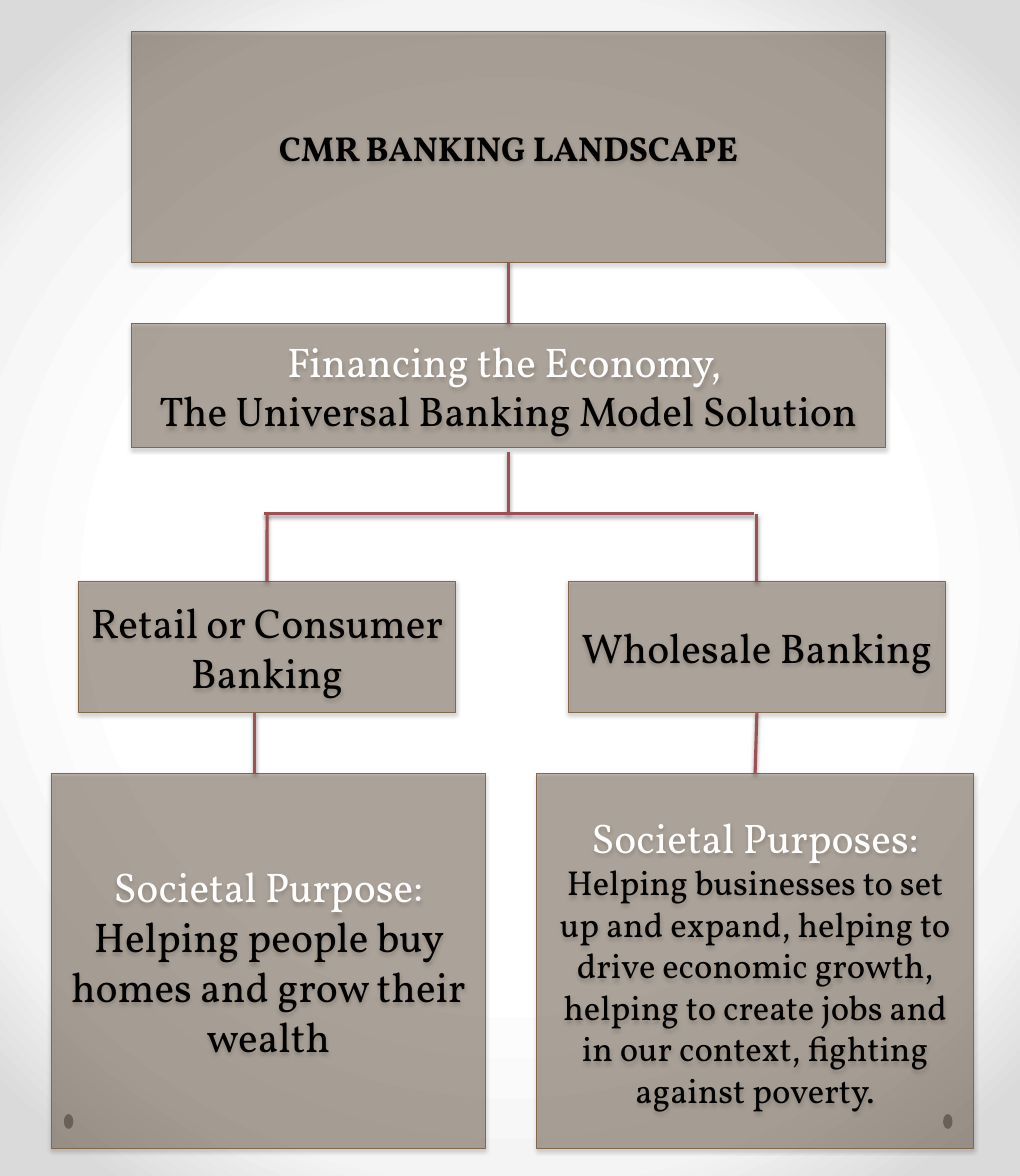
from lxml.etree import SubElement
from pptx import Presentation
from pptx.dml.color import RGBColor
from pptx.enum.shapes import MSO_CONNECTOR, MSO_SHAPE
from pptx.enum.text import MSO_ANCHOR, MSO_AUTO_SIZE, PP_ALIGN
from pptx.oxml.ns import qn
from pptx.util import Cm, Pt

FONT = "Vollkorn"
WHITE = RGBColor(0xFF, 0xFF, 0xFF)
BLACK = RGBColor(0x00, 0x00, 0x00)
BROWN = RGBColor(0x63, 0x4D, 0x36)
BORDER = RGBColor(0x84, 0x66, 0x48)
RED = RGBColor(0x9C, 0x52, 0x52)
GRAY = RGBColor(0x80, 0x80, 0x80)
LIGHT = RGBColor(0xF4, 0xF4, 0xF4)
SILVER = RGBColor(0xDA, 0xDA, 0xDA)
BACKGROUND_STOPS = [(50, WHITE), (76, LIGHT), (92, SILVER)]


def add_child(parent, tag, **attributes):
    values = {name: str(value) for name, value in attributes.items()}
    return SubElement(parent, qn(tag), values)


def set_background(slide):
    """Radial gradient, white in the middle and grey in the corners."""
    slide.background.fill.solid()
    properties = slide._element.cSld.find(qn("p:bg")).find(qn("p:bgPr"))
    properties.remove(properties.find(qn("a:solidFill")))
    gradient = add_child(properties, "a:gradFill", rotWithShape=1)
    properties.insert(0, gradient)
    stops = add_child(gradient, "a:gsLst")
    for position, color in BACKGROUND_STOPS:
        stop = add_child(stops, "a:gs", pos=position * 1000)
        add_child(stop, "a:srgbClr", val=color)
    circle = add_child(gradient, "a:path", path="circle")
    add_child(circle, "a:fillToRect", l=50000, t=50000, r=50000, b=50000)


def add_shadow(shape, opacity, distance):
    effects = add_child(shape._element.spPr, "a:effectLst")
    shadow = add_child(effects, "a:outerShdw", blurRad=Pt(3.1), dist=Pt(distance),
                       dir=5400000, algn="ctr", rotWithShape=0)
    color = add_child(shadow, "a:srgbClr", val=BLACK)
    add_child(color, "a:alpha", val=opacity * 1000)


def add_run(paragraph, text, size=30, color=BLACK, bold=False):
    run = paragraph.add_run()
    run.text = text
    run.font.name = FONT
    run.font.size = Pt(size)
    run.font.bold = bold
    run.font.color.rgb = color


def format_box(shape, paragraphs):
    """Paragraphs are lists of (text, format) pairs."""
    shape.fill.solid()
    shape.fill.fore_color.rgb = BROWN
    fill_color = shape._element.spPr.find(qn("a:solidFill"))[0]
    add_child(fill_color, "a:alpha", val=40000)
    shape.line.color.rgb = BORDER
    shape.line.width = Pt(0.75)
    add_shadow(shape, opacity=35, distance=1.8)
    frame = shape.text_frame
    frame.word_wrap = True
    frame.auto_size = MSO_AUTO_SIZE.NONE
    frame.vertical_anchor = MSO_ANCHOR.MIDDLE
    for index, runs in enumerate(paragraphs):
        paragraph = frame.add_paragraph() if index else frame.paragraphs[0]
        paragraph.alignment = PP_ALIGN.CENTER
        for text, text_format in runs:
            add_run(paragraph, text, **text_format)


def add_title(slide, left, top, width, height, text):
    title = slide.shapes.title
    title.left, title.top = Cm(left), Cm(top)
    title.width, title.height = Cm(width), Cm(height)
    format_box(title, [[(text, {"size": 25, "bold": True})]])
    return title


def add_box(slide, left, top, width, height, *paragraphs):
    box = slide.shapes.add_shape(MSO_SHAPE.FLOWCHART_PROCESS, Cm(left), Cm(top),
                                 Cm(width), Cm(height))
    format_box(box, paragraphs)
    return box


def add_line(slide, start, end, above=None, below=None):
    """Line between two points, joined to the boxes above and below if given."""
    line = slide.shapes.add_connector(MSO_CONNECTOR.STRAIGHT, Cm(start[0]),
                                      Cm(start[1]), Cm(end[0]), Cm(end[1]))
    if above is not None:
        line.begin_connect(above, 2)
    if below is not None:
        line.end_connect(below, 0)
    line.line.color.rgb = RED
    line.line.width = Pt(2.25)
    add_shadow(line, opacity=38, distance=1.6)


def add_dot(slide, left):
    dot = slide.shapes.add_shape(MSO_SHAPE.OVAL, Cm(left), Cm(28.42), Cm(0.24), Cm(0.38))
    dot.shadow.inherit = False
    dot.fill.solid()
    dot.fill.fore_color.rgb = GRAY
    dot.line.fill.background()


def main():
    presentation = Presentation()
    presentation.slide_width, presentation.slide_height = Cm(26.01), Cm(30)
    slide = presentation.slides.add_slide(presentation.slide_layouts[5])
    set_background(slide)
    for left in (1.63, 24.05):
        add_dot(slide, left)

    # Boxes
    white = {"color": WHITE}
    title = add_title(slide, 3.35, 0.81, 19.23, 5.89, "CMR BANKING LANDSCAPE")
    solution = add_box(slide, 3.35, 8.26, 19.23, 3.15,
                       [("Financing the Economy, ", white)],
                       [("The Universal Banking Model Solution", {})])
    retail = add_box(slide, 2.01, 14.83, 9.6, 3.35, [("Retail or Consumer Banking", {})])
    wholesale = add_box(slide, 14.5, 14.83, 9.6, 3.35, [("Wholesale Banking", {})])
    add_box(slide, 1.32, 19.74, 11.05, 9.55,
            [("Societal Purpose:", white),
             (" Helping people buy homes and grow their wealth", {})])
    wholesale_purposes = add_box(
        slide, 13.69, 19.74, 11.13, 9.55,
        [("Societal Purposes: ", white),
         ("Helping businesses to set up and expand, helping to drive economic growth, "
          "helping to create jobs and in our context, fighting against poverty.",
          {"size": 25})])

    # Lines from the title down to the two branches
    add_line(slide, (12.97, 6.7), (12.97, 8.26), above=title, below=solution)
    add_line(slide, (12.97, 11.53), (12.97, 13.11))
    add_line(slide, (19.23, 13.11), (6.73, 13.11))
    for x, branch in ((6.81, retail), (19.3, wholesale)):
        add_line(slide, (x, 13.11), (x, 14.83), below=branch)

    # Lines from the branches to their purposes
    add_line(slide, (6.5, 18.18), (6.5, 19.74))
    add_line(slide, (19.3, 18.18), (19.3, 19.74), above=wholesale, below=wholesale_purposes)

    presentation.save("out.pptx")


if __name__ == "__main__":
    main()
